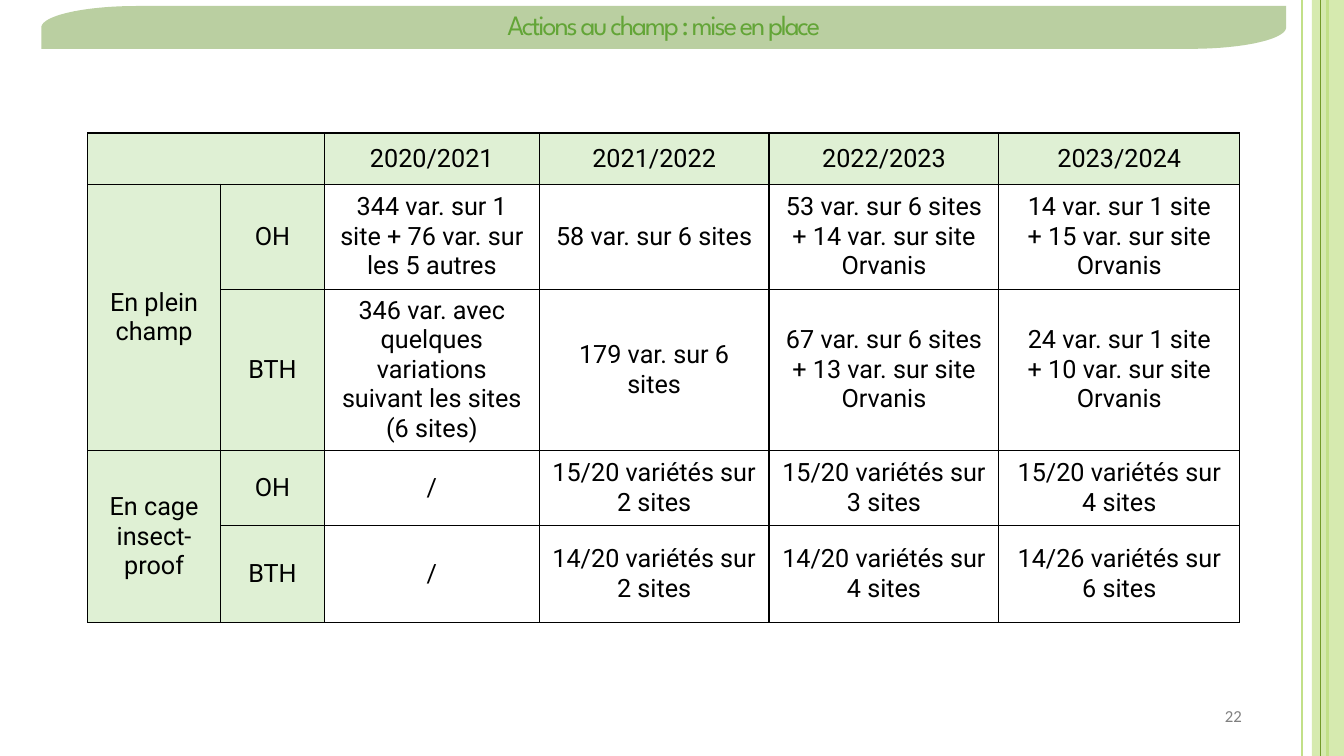
from math import cos, pi, sin

from lxml.etree import SubElement
from pptx import Presentation
from pptx.dml.color import RGBColor
from pptx.enum.shapes import MSO_CONNECTOR, MSO_SHAPE
from pptx.enum.text import MSO_ANCHOR, PP_ALIGN
from pptx.oxml import parse_xml
from pptx.oxml.ns import nsdecls, qn
from pptx.util import Pt

HUES = {
    "band": "BACFA1",
    "title": "63A537",
    "head": "DFF0D4",
    "cell": "FFFFFF",
    "ink": "000000",
    "page": "808080",
    "strip": "D6EAAF",
    "light": "C2E088",
    "dark": "739A28",
}


def hue(name):
    return RGBColor.from_string(HUES[name])


def write(frame, lines, font, size, color, align, anchor):
    """Fill a text frame with one styled run per line."""
    frame.word_wrap = True
    frame.vertical_anchor = anchor
    for i, line in enumerate(lines):
        par = frame.add_paragraph() if i else frame.paragraphs[0]
        par.alignment = align
        run = par.add_run()
        run.text = line
        run.font.name = font
        run.font.size = Pt(size)
        run.font.color.rgb = hue(color)


deck = Presentation()
deck.slide_width, deck.slide_height = Pt(960), Pt(540)
slide = deck.slides.add_slide(deck.slide_layouts[6])
shapes = slide.shapes

# Title band: rounded at top left and bottom right
left, top, right, bottom = 29.5, 4.3, 918.7, 34.9
wide, high = 68.4, 15.4
steps = 24
points = []
for i in range(steps + 1):
    turn = pi / 2 * i / steps
    points.append((left + wide * (1 - cos(turn)), top + high * (1 - sin(turn))))
points.append((right, top))
for i in range(steps + 1):
    turn = pi / 2 * i / steps
    points.append((right - wide * (1 - cos(turn)), bottom - high * (1 - sin(turn))))
points.append((left, bottom))
points = [(Pt(x), Pt(y)) for x, y in points]
path = shapes.build_freeform(*points[0])
path.add_line_segments(points[1:], close=True)
band = path.convert_to_shape()
band.shadow.inherit = False
band.fill.solid()
band.fill.fore_color.rgb = hue("band")
band.line.fill.background()

title = shapes.add_textbox(Pt(29.5), Pt(-15.8), Pt(889.2), Pt(69.8)).text_frame
write(title, ["Actions au champ : mise en place"], "League Spartan", 20,
      "title", PP_ALIGN.CENTER, MSO_ANCHOR.MIDDLE)
title.paragraphs[0].line_spacing = 0.9
title.paragraphs[0].runs[0].font._element.set("spc", "-150")

page = shapes.add_textbox(Pt(678.2), Pt(500.4), Pt(216), Pt(28.8)).text_frame
write(page, ["22"], "Calibri", 12, "page", PP_ALIGN.RIGHT, MSO_ANCHOR.TOP)

# Right edge
strip = shapes.add_shape(MSO_SHAPE.RECTANGLE, Pt(937), 0, Pt(23), Pt(540))
strip.shadow.inherit = False
strip.fill.solid()
strip.fill.fore_color.rgb = hue("strip")
strip.line.fill.background()
for x, color, width in [(930.2, "light", 1.5), (948.2, "light", 1.5), (943.2, "dark", 1)]:
    rule = shapes.add_connector(MSO_CONNECTOR.STRAIGHT, Pt(x), 0, Pt(x), Pt(540))
    rule.line.color.rgb = hue(color)
    rule.line.width = Pt(width)
    SubElement(rule._element.spPr, qn("a:effectLst"))

# Trial table; a line break in a cell starts a new paragraph
ROWS = [
    ["", "", "2020/2021", "2021/2022", "2022/2023", "2023/2024"],
    ["En plein champ", "OH", "344 var. sur 1 site + 76 var. sur les 5 autres",
     "58 var. sur 6 sites", "53 var. sur 6 sites + 14 var. sur site Orvanis",
     "14 var. sur 1 site\n+ 15 var. sur site Orvanis"],
    ["", "BTH", "346 var. avec quelques variations suivant les sites (6 sites)",
     "179 var. sur 6 sites", "67 var. sur 6 sites + 13 var. sur site Orvanis",
     "24 var. sur 1 site\n+ 10 var. sur site Orvanis"],
    ["En cage insect-proof", "OH", "/", "15/20 variétés sur 2 sites",
     "15/20 variétés sur 3 sites", "15/20 variétés sur 4 sites"],
    ["", "BTH", "/", "14/20 variétés sur 2 sites",
     "14/20 variétés sur 4 sites", "14/26 variétés sur 6 sites"],
]
widths = [95, 74.2, 153.4, 164.2, 164.2, 172]
heights = [36.7, 74.9, 102.2, 53.3, 69.8]
table = shapes.add_table(len(heights), len(widths), Pt(62.6), Pt(95),
                         Pt(sum(widths)), Pt(sum(heights))).table
for col, width in zip(table.columns, widths):
    col.width = Pt(width)
for row, height in zip(table.rows, heights):
    row.height = Pt(height)

for r, row in enumerate(ROWS):
    for c, text in enumerate(row):
        cell = table.cell(r, c)
        cell.fill.solid()
        cell.fill.fore_color.rgb = hue("head" if r == 0 or c < 2 else "cell")
        cell.vertical_anchor = MSO_ANCHOR.MIDDLE
        if text:
            write(cell.text_frame, text.split("\n"), "Roboto", 18, "ink",
                  PP_ALIGN.CENTER, None)
        props = cell._tc.get_or_add_tcPr()
        for i, side in enumerate(["lnL", "lnR", "lnT", "lnB"]):
            props.insert(i, parse_xml(
                f'<a:{side} {nsdecls("a")} w="12700"><a:solidFill>'
                f'<a:srgbClr val="{HUES["ink"]}"/></a:solidFill></a:{side}>'))

table.cell(0, 0).merge(table.cell(0, 1))
table.cell(1, 0).merge(table.cell(2, 0))
table.cell(3, 0).merge(table.cell(4, 0))

deck.save("out.pptx")
